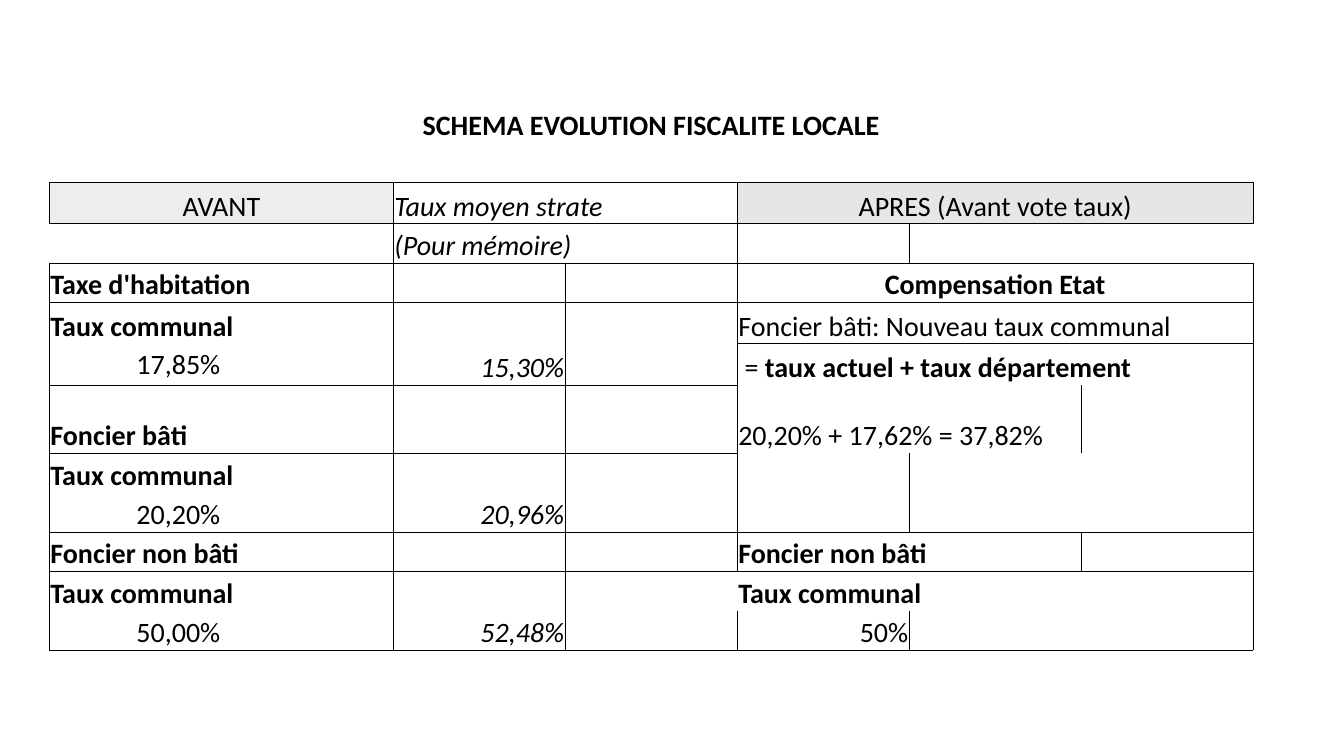
from collections import defaultdict
from dataclasses import dataclass

from lxml.etree import SubElement
from pptx import Presentation
from pptx.dml.color import RGBColor
from pptx.enum.text import MSO_ANCHOR as Anchor, PP_ALIGN as Align
from pptx.oxml.ns import qn
from pptx.table import Table
from pptx.util import Inches, Pt

COLORS = {"ink": "000000", "before": "EDEDED", "after": "E7E6E6"}
FONT = "Calibri"
NO_STYLE = "{2D5ABB26-0587-4C30-8999-92F81FD0307C}"
ROW_HEIGHT = 0.39
SPECIAL_HEIGHTS = {1: 0.46, 3: 0.41, 6: 0.41, 7: 0.41, 8: 0.68}
ROWS, COLS = 15, 7
SIDES = "LRTB"


@dataclass(frozen=True)
class Entry:
    row: int
    col: int
    text: str
    span: int = 1
    align: Align = Align.LEFT
    bold: bool = False
    italic: bool = False
    fill: str = ""
    bold_tail: str = ""
    anchor: Anchor = Anchor.BOTTOM


@dataclass(frozen=True)
class Frame:
    top: int
    left: int
    bottom: int
    right: int


def heading(row: int, col: int, text: str, span: int = 2) -> Entry:
    return Entry(row, col, text, span, bold=True)


def rate(row: int, col: int, text: str, anchor: Anchor = Anchor.BOTTOM) -> Entry:
    return Entry(row, col, text, align=Align.RIGHT, italic=col == 2, anchor=anchor)


ENTRIES = [
    Entry(1, 0, "SCHEMA EVOLUTION FISCALITE LOCALE", 7, Align.CENTER, bold=True),
    Entry(3, 0, "AVANT", 2, Align.CENTER, fill="before"),
    Entry(3, 2, "Taux moyen strate", 2, italic=True),
    Entry(3, 4, "APRES (Avant vote taux)", 3, Align.CENTER, fill="after"),
    Entry(4, 2, "(Pour mémoire)", 2, italic=True),
    heading(5, 0, "Taxe d'habitation"),
    Entry(5, 4, "Compensation Etat", 3, Align.CENTER, bold=True),
    heading(6, 0, "Taux communal"),
    Entry(6, 4, "Foncier bâti: Nouveau taux communal", 3),
    rate(7, 0, "17,85%", Anchor.MIDDLE),
    rate(7, 2, "15,30%"),
    Entry(7, 4, " = ", 3, bold_tail="taux actuel + taux département"),
    heading(8, 0, "Foncier bâti", 1),
    Entry(8, 4, "20,20% + 17,62% = 37,82%", 2),
    heading(9, 0, "Taux communal"),
    rate(10, 0, "20,20%"),
    rate(10, 2, "20,96%"),
    heading(11, 0, "Foncier non bâti"),
    heading(11, 4, "Foncier non bâti"),
    heading(12, 0, "Taux communal"),
    heading(12, 4, "Taux communal"),
    rate(13, 0, "50,00%"),
    rate(13, 2, "52,48%"),
    rate(13, 4, "50%"),
]

TAX_BANDS = [(5, 7), (8, 10), (11, 13)]
FRAMES = [
    Frame(3, 0, 3, 1), Frame(3, 2, 4, 3), Frame(3, 4, 3, 6),
    *(Frame(top, left, bottom, left + 1) for top, bottom in TAX_BANDS for left in (0, 2)),
    Frame(5, 4, 5, 6), Frame(6, 4, 10, 6), Frame(11, 4, 13, 6),
]
OPEN_EDGES = [(12, 3, "R"), (12, 4, "L")]

Edges = dict[tuple[int, int], set[str]]


def collect_edges() -> Edges:
    """Outline every frame, marking each line on the cells at both of its sides."""
    edges: Edges = defaultdict(set)
    for frame in FRAMES:
        for col in range(frame.left, frame.right + 1):
            edges[frame.top, col].add("T")
            edges[frame.top - 1, col].add("B")
            edges[frame.bottom, col].add("B")
            edges[frame.bottom + 1, col].add("T")
        for row in range(frame.top, frame.bottom + 1):
            edges[row, frame.left].add("L")
            edges[row, frame.left - 1].add("R")
            edges[row, frame.right].add("R")
            edges[row, frame.right + 1].add("L")
    for row, col, side in OPEN_EDGES:
        edges[row, col].discard(side)
    for entry in ENTRIES:
        last = entry.col + entry.span - 1
        edges[entry.row, entry.col] |= edges[entry.row, last]
    return edges


def draw_borders(table: Table, edges: Edges) -> None:
    for row in range(ROWS):
        for col in range(COLS):
            properties = table.cell(row, col)._tc.get_or_add_tcPr()
            sides = [side for side in SIDES if side in edges[row, col]]
            for position, side in enumerate(sides):
                line = SubElement(properties, qn(f"a:ln{side}"), w=str(Pt(0.5)))
                solid = SubElement(line, qn("a:solidFill"))
                SubElement(solid, qn("a:srgbClr"), val=COLORS["ink"])
                properties.insert(position, line)


def clear_cells(table: Table) -> None:
    for row in table.rows:
        for cell in row.cells:
            cell.margin_left = cell.margin_right = cell.margin_top = Inches(0.01)
            cell.margin_bottom = 0
            cell.fill.background()


def write_entry(table: Table, entry: Entry) -> None:
    cell = table.cell(entry.row, entry.col)
    if entry.span > 1:
        cell.merge(table.cell(entry.row, entry.col + entry.span - 1))
    cell.vertical_anchor = entry.anchor
    if entry.fill:
        cell.fill.solid()
        cell.fill.fore_color.rgb = RGBColor.from_string(COLORS[entry.fill])
    para = cell.text_frame.paragraphs[0]
    para.alignment = entry.align
    para.font.name = FONT
    para.font.size = Pt(20)
    para.font.bold = entry.bold
    para.font.italic = entry.italic
    para.font.color.rgb = RGBColor.from_string(COLORS["ink"])
    para.add_run().text = entry.text
    if entry.bold_tail:
        span = para.add_run()
        span.text = entry.bold_tail
        span.font.bold = True


def main() -> None:
    deck = Presentation()
    deck.slide_width, deck.slide_height = Inches(13.33), Inches(7.5)
    page = deck.slides.add_slide(deck.slide_layouts[6])
    box = page.shapes.add_table(
        ROWS, COLS, Inches(0.49), Inches(0.57), Inches(11.94), Inches(6.26))
    table = box.table
    table.first_row = table.horz_banding = False
    table._tbl.tblPr.find(qn("a:tableStyleId")).text = NO_STYLE
    for index, row in enumerate(table.rows):
        row.height = Inches(SPECIAL_HEIGHTS.get(index, ROW_HEIGHT))
    clear_cells(table)
    for entry in ENTRIES:
        write_entry(table, entry)
    draw_borders(table, collect_edges())
    deck.save("out.pptx")


if __name__ == "__main__":
    main()
